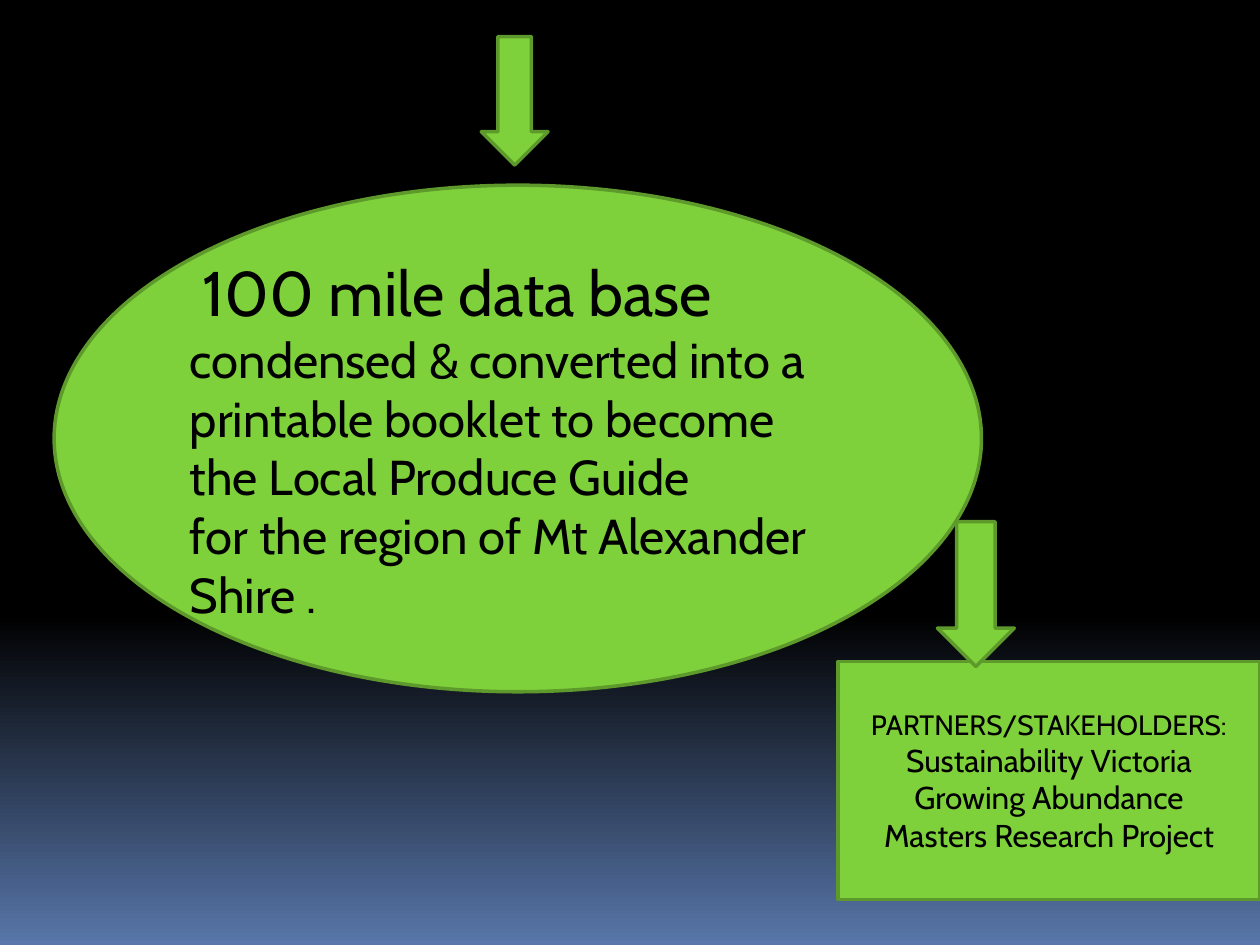
from pptx import Presentation
from pptx.dml.color import RGBColor
from pptx.enum.shapes import MSO_SHAPE as Shape
from pptx.enum.text import MSO_ANCHOR as Anchor, PP_ALIGN as Align
from pptx.util import Inches, Pt

WIDTH, HEIGHT = 10, 7.5
FONT, TEXT, FILL, LINE = "Cabin", "000000", "7FD13B", "5D992B"
SKY = [(0.65, "000000"), (1, "5876A9")]

GUIDE = [
    [(" ", 32), ("100 mile data base ", 36),
     ("condensed & converted into a printable booklet to become the Local Produce Guide", 28)],
    [("for the region of Mt Alexander Shire .", 28)],
]
PARTNERS = [
    [("PARTNERS/STAKEHOLDERS:", 16)],
    [("Sustainability Victoria", 18)],
    [("Growing Abundance", 18)],
    [("Masters Research Project", 18)],
]
SHAPES = [
    (Shape.OVAL, (0.43, 1.47, 7.36, 4.02), GUIDE, Align.LEFT),
    (Shape.RECTANGLE, (6.65, 5.25, 3.35, 1.89), PARTNERS, Align.CENTER),
    (Shape.DOWN_ARROW, (3.82, 0.29, 0.53, 1.02), [], None),
    (Shape.DOWN_ARROW, (7.44, 4.14, 0.61, 1.15), [], None),
]


def color(value):
    return RGBColor.from_string(value)


def write(frame, paragraphs, align=Align.LEFT, font=FONT, ink=TEXT):
    frame.word_wrap = True
    frame.vertical_anchor = Anchor.MIDDLE
    frame.margin_left = frame.margin_right = frame.margin_top = frame.margin_bottom = 0
    for index, spans in enumerate(paragraphs):
        para = frame.add_paragraph() if index else frame.paragraphs[0]
        para.alignment = align
        for words, size in spans:
            span = para.add_run()
            span.text = words
            span.font.name = font
            span.font.size = Pt(size)
            span.font.color.rgb = color(ink)


def paint_background(page):
    fill = page.background.fill
    fill.gradient()
    fill.gradient_angle = 270
    for stop, (position, value) in zip(fill.gradient_stops, SKY):
        stop.position = position
        stop.color.rgb = color(value)


def add_green_shape(page, kind, place, paragraphs, align):
    box = page.shapes.add_shape(kind, *map(Inches, place))
    box.shadow.inherit = False
    box.fill.solid()
    box.fill.fore_color.rgb = color(FILL)
    box.line.color.rgb = color(LINE)
    box.line.width = Pt(2)
    if paragraphs:
        write(box.text_frame, paragraphs, align=align)


def main():
    deck = Presentation()
    deck.slide_width, deck.slide_height = Inches(WIDTH), Inches(HEIGHT)
    page = deck.slides.add_slide(deck.slide_layouts[6])
    paint_background(page)
    for item in SHAPES:
        add_green_shape(page, *item)
    deck.save("out.pptx")


if __name__ == "__main__":
    main()
